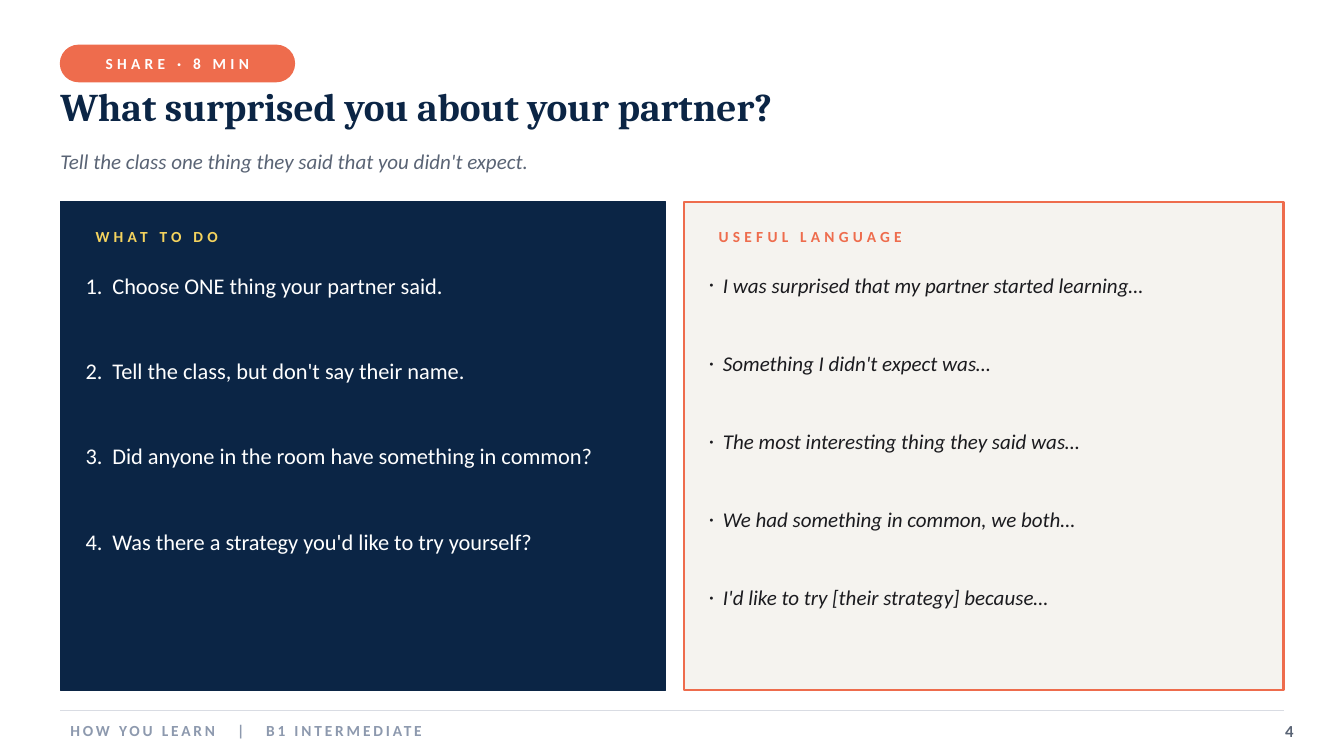
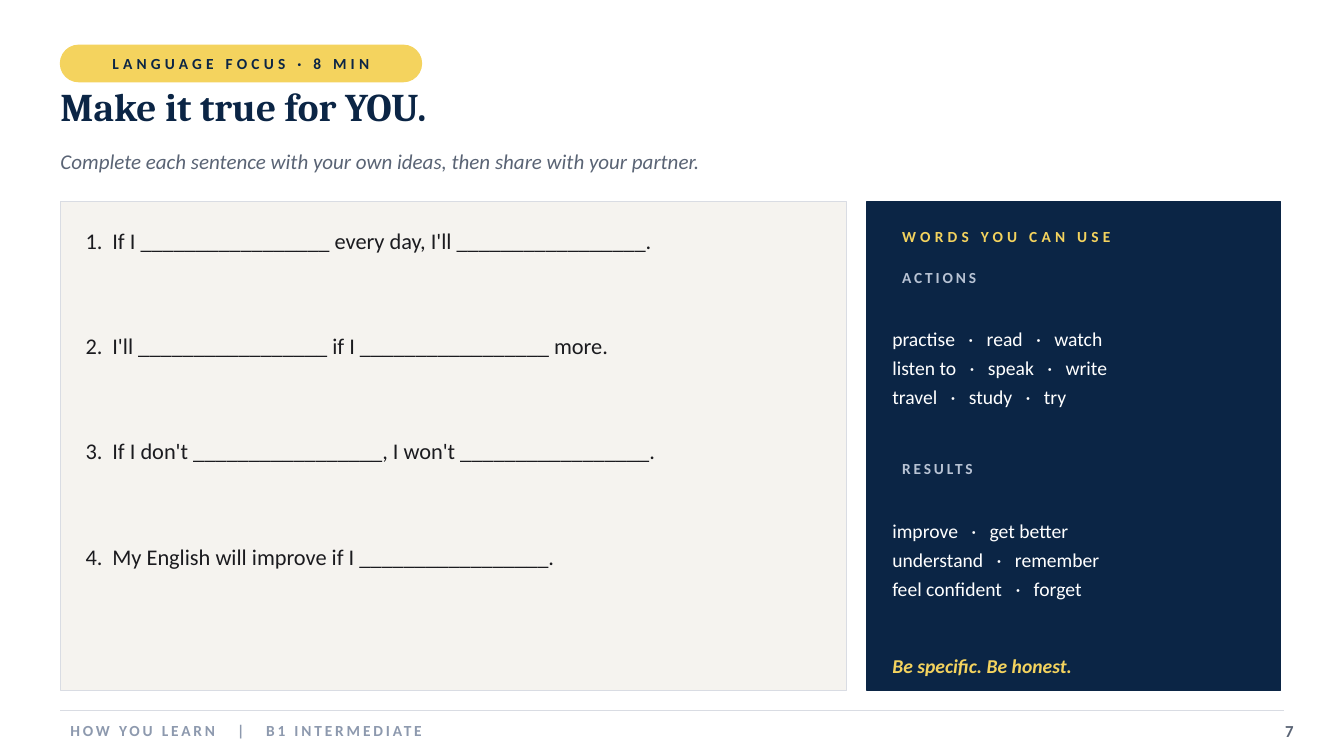
from dataclasses import dataclass

import lxml.etree
import pptx
import pptx.dml.color
import pptx.enum.shapes
import pptx.enum.text
import pptx.oxml.ns
import pptx.util

COLORS = {
    "navy": "0B2545", "coral": "EE6C4D", "yellow": "F4D35E", "cream": "F5F3EF",
    "white": "FFFFFF", "ink": "1B1B1F", "slate": "5A6475", "rule": "D9DCE3",
    "footer": "8D99AE", "mist": "B8C3D4",
}
CELL = 0.1
LINE_HEIGHT = 1.22
PADDING = 2.5
ALIGN = pptx.enum.text.PP_ALIGN
ANCHOR = pptx.enum.text.MSO_ANCHOR
SHAPE = pptx.enum.shapes.MSO_SHAPE


@dataclass(frozen=True)
class Box:
    left: float
    top: float
    width: float
    height: float

    def emu(self):
        return [cells(n) for n in (self.left, self.top, self.width, self.height)]

    def row(self, top, height):
        return Box(self.left + PADDING, self.top + top, self.width - 2 * PADDING, height)


@dataclass(frozen=True)
class Style:
    size: float
    color: str
    bold: bool = False
    italic: bool = False
    spacing: float = 0
    font: str = "Calibri"


TITLE = Style(28, "navy", bold=True, font="Cambria")
SUBTITLE = Style(15, "slate", italic=True)
FOOTER = Style(11, "footer", bold=True, spacing=2)
PAGE_NUMBER = Style(12, "slate", bold=True)
GROUP_LABEL = Style(11, "mist", bold=True, spacing=2)
WORDS = Style(14, "white")
REMINDER = Style(14, "yellow", bold=True, italic=True)
PHRASE = Style(15, "ink", italic=True)

CONTENT = Box(6, 20, 121.3, 48.5)


def cells(count):
    return pptx.util.Inches(count * CELL)


def rgb(name):
    return pptx.dml.color.RGBColor.from_string(COLORS[name])


def heading(color):
    return Style(11, color, bold=True, spacing=3)


def task(color):
    return Style(16, color)


def style_run(run, style, spacing=None):
    font = run.font
    font.name, font.size = style.font, pptx.util.Pt(style.size)
    font.bold, font.italic = style.bold, style.italic
    font.color.rgb = rgb(style.color)
    spacing = style.spacing if spacing is None else spacing
    if spacing:
        run._r.get_or_add_rPr().set("spc", str(round(spacing * 100)))


def set_paragraph(paragraph, text, style, align=ALIGN.LEFT):
    paragraph.text = text
    paragraph.alignment = align
    for run in paragraph.runs:
        style_run(run, style)


def set_separated(paragraph, parts, mark, style, gap):
    set_paragraph(paragraph, parts[0], style)
    for part in parts[1:]:
        for text, spacing in ((" " + mark, gap), (" " + part, style.spacing)):
            run = paragraph.add_run()
            run.text = text
            style_run(run, style, spacing)


def prepare_frame(shape, padded=False, anchor=ANCHOR.MIDDLE):
    frame = shape.text_frame
    frame.word_wrap = True
    frame.vertical_anchor = anchor
    frame.margin_left = frame.margin_right = cells(1 if padded else 0)
    frame.margin_top = frame.margin_bottom = cells(0.5 if padded else 0)
    return frame


def add_frame(slide, box, **options):
    return prepare_frame(slide.shapes.add_textbox(*box.emu()), **options)


def add_line(slide, box, text, style, align=ALIGN.LEFT, padded=False):
    frame = add_frame(slide, box, padded=padded)
    set_paragraph(frame.paragraphs[0], text, style, align)


def add_area(slide, box, fill, line, width=1, preset=SHAPE.RECTANGLE):
    area = slide.shapes.add_shape(preset, *box.emu())
    area.shadow.inherit = False
    area.fill.solid()
    area.fill.fore_color.rgb = rgb(fill)
    area.line.color.rgb = rgb(line)
    area.line.width = pptx.util.Pt(width)
    return area


def set_bullet(paragraph, style, hang, mark):
    properties = paragraph._p.get_or_add_pPr()
    properties.set("marL", str(cells(hang)))
    properties.set("indent", str(-cells(hang)))
    qn = pptx.oxml.ns.qn
    color = lxml.etree.SubElement(properties, qn("a:buClr"))
    lxml.etree.SubElement(color, qn("a:srgbClr"), val=COLORS[style.color])
    lxml.etree.SubElement(properties, qn("a:buFont"), typeface=style.font)
    if mark:
        lxml.etree.SubElement(properties, qn("a:buChar"), char=mark)
    else:
        lxml.etree.SubElement(properties, qn("a:buAutoNum"), type="arabicPeriod")


def add_list(slide, panel, top, pitch, items, style, mark=None):
    box = panel.row(top, pitch * len(items))
    frame = add_frame(slide, box, anchor=ANCHOR.TOP)
    gap = pitch * CELL * 72 - style.size * LINE_HEIGHT
    for index, item in enumerate(items):
        paragraph = frame.add_paragraph() if index else frame.paragraphs[0]
        set_bullet(paragraph, style, 1.4 if mark else 2.65, mark)
        set_paragraph(paragraph, item, style)
        if index < len(items) - 1:
            paragraph.space_after = pptx.util.Pt(gap)


def add_header(slide, box, stage, stage_width, fill, ink, title, subtitle):
    pill_box = Box(box.left, box.top, stage_width, 3.6)
    pill = add_area(slide, pill_box, fill, fill, preset=SHAPE.ROUNDED_RECTANGLE)
    pill.adjustments[0] = 0.5
    set_paragraph(prepare_frame(pill).paragraphs[0], stage, heading(ink), ALIGN.CENTER)
    add_line(slide, Box(box.left, box.top + 2.5, box.width, 7), title, TITLE)
    add_line(slide, Box(box.left, box.top + 9.5, box.width, 4), subtitle, SUBTITLE)


def add_footer(slide, box, number):
    right = box.left + box.width
    rule = slide.shapes.add_connector(
        pptx.enum.shapes.MSO_CONNECTOR.STRAIGHT,
        cells(box.left), cells(box.top), cells(right), cells(box.top))
    rule.line.color.rgb = rgb("rule")
    rule.line.width = pptx.util.Pt(0.75)
    lxml.etree.SubElement(rule._element.spPr, pptx.oxml.ns.qn("a:effectLst"))
    course = add_frame(slide, Box(box.left, box.top + 0.5, 110, 3), padded=True)
    set_separated(course.paragraphs[0], ["HOW YOU LEARN", "B1 INTERMEDIATE"], "|", FOOTER, 11)
    add_line(slide, Box(right - 3, box.top + 0.5, 5, 3), str(number),
             PAGE_NUMBER, ALIGN.RIGHT, padded=True)


def add_lesson_slide(deck, number, **header):
    slide = deck.slides.add_slide(deck.slide_layouts[6])
    slide.background.fill.solid()
    slide.background.fill.fore_color.rgb = rgb("white")
    add_header(slide, Box(CONTENT.left, 4.5, 120, 13.5), **header)
    add_footer(slide, Box(CONTENT.left, 70.5, CONTENT.width, 3.5), number)
    return slide


def split_content(left_width, gap, right_width):
    right_start = CONTENT.left + left_width + gap
    return (Box(CONTENT.left, CONTENT.top, left_width, CONTENT.height),
            Box(right_start, CONTENT.top, right_width, CONTENT.height))


def add_panel(slide, box, fill, line, width=1, label=None, label_color=None):
    add_area(slide, box, fill, line, width)
    if label:
        add_line(slide, box.row(2, 3), label, heading(label_color), padded=True)


def add_word_bank(slide, box, groups, reminder):
    add_panel(slide, box, "navy", "navy", label="WORDS YOU CAN USE", label_color="yellow")
    for index, (label, rows) in enumerate(groups.items()):
        top = 6 + 19 * index
        add_line(slide, box.row(top, 3), label, GROUP_LABEL, padded=True)
        frame = add_frame(slide, box.row(top + 3, 15))
        for row, words in enumerate(rows):
            paragraph = frame.add_paragraph() if row else frame.paragraphs[0]
            set_separated(paragraph, words, "·", WORDS, 6.3)
            paragraph.space_after = pptx.util.Pt(4)
    add_line(slide, box.row(44, 4), reminder, REMINDER)


def add_share_slide(deck):
    slide = add_lesson_slide(
        deck, 4, stage="SHARE · 8 MIN", stage_width=23.2, fill="coral", ink="white",
        title="What surprised you about your partner?",
        subtitle="Tell the class one thing they said that you didn't expect.")
    steps, language = split_content(60, 1.8, 59.5)
    add_panel(slide, steps, "navy", "navy", label="WHAT TO DO", label_color="yellow")
    add_list(slide, steps, 7, 8.5, [
        "Choose ONE thing your partner said.",
        "Tell the class, but don't say their name.",
        "Did anyone in the room have something in common?",
        "Was there a strategy you'd like to try yourself?",
    ], task("white"))
    add_panel(slide, language, "cream", "coral", 1.5, "USEFUL LANGUAGE", "coral")
    add_list(slide, language, 7, 7.8, [
        "I was surprised that my partner started learning…",
        "Something I didn't expect was…",
        "The most interesting thing they said was…",
        "We had something in common, we both…",
        "I'd like to try [their strategy] because…",
    ], PHRASE, mark="·")


def add_language_slide(deck):
    slide = add_lesson_slide(
        deck, 7, stage="LANGUAGE FOCUS · 8 MIN", stage_width=35.8, fill="yellow", ink="navy",
        title="Make it true for YOU.",
        subtitle="Complete each sentence with your own ideas, then share with your partner.")
    sentences, word_bank = split_content(78, 2, 41)
    blank = "_" * 17
    add_panel(slide, sentences, "cream", "rule", 0.5)
    add_list(slide, sentences, 2.5, 10.5, [
        f"If I {blank} every day, I'll {blank}.",
        f"I'll {blank} if I {blank} more.",
        f"If I don't {blank}, I won't {blank}.",
        f"My English will improve if I {blank}.",
    ], task("ink"))
    add_word_bank(slide, word_bank, {
        "ACTIONS": [["practise", "read", "watch"], ["listen to", "speak", "write"],
                    ["travel", "study", "try"]],
        "RESULTS": [["improve", "get better"], ["understand", "remember"],
                    ["feel confident", "forget"]],
    }, "Be specific. Be honest.")


def main():
    deck = pptx.Presentation()
    deck.slide_width = pptx.util.Inches(13.33)
    deck.slide_height = pptx.util.Inches(7.5)
    add_share_slide(deck)
    add_language_slide(deck)
    deck.save("out.pptx")


if __name__ == "__main__":
    main()
